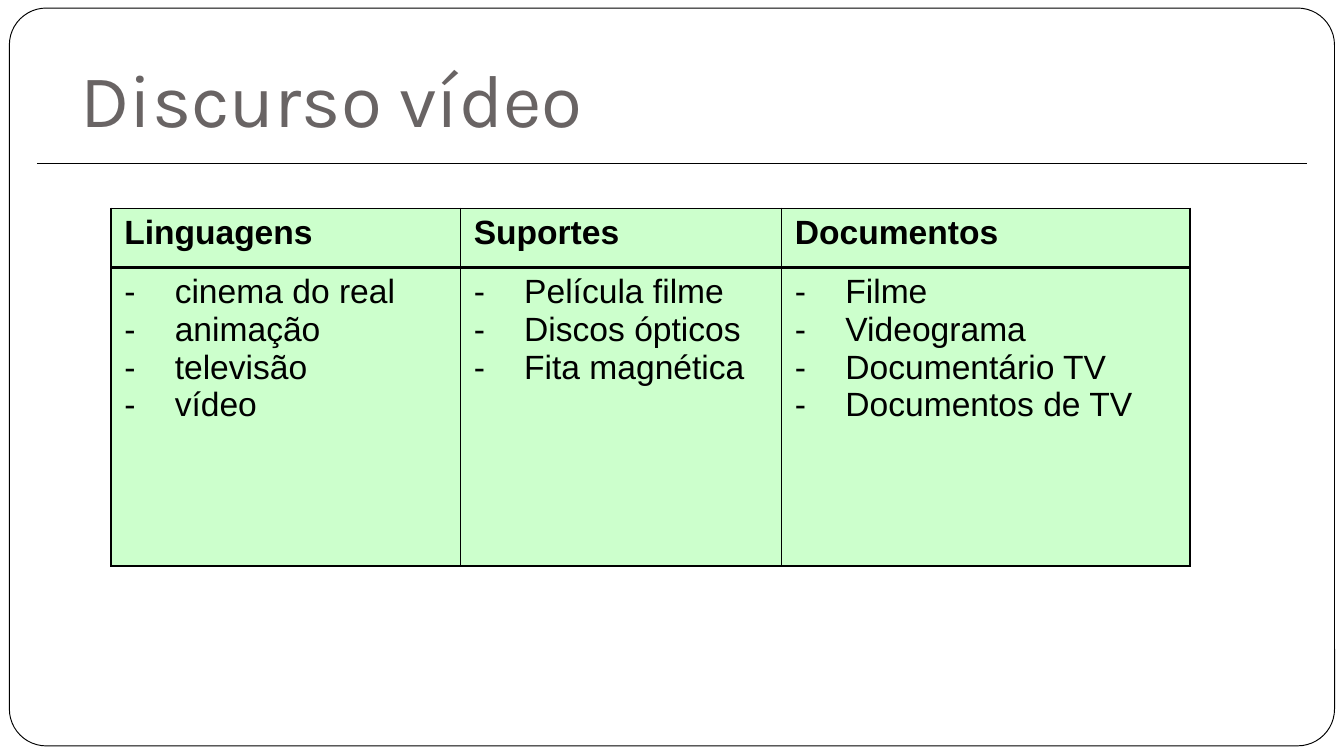
import pptx
import pptx.util
import pptx.dml.color
import pptx.enum.shapes
import pptx.enum.text
import pptx.oxml
import pptx.oxml.ns
from lxml import etree

PX = 4572  # 200 px to the inch
ALIGN = pptx.enum.text.PP_ALIGN
ANCHOR = pptx.enum.text.MSO_ANCHOR
KIND = pptx.enum.shapes.MSO_SHAPE
LINK = pptx.enum.shapes.MSO_CONNECTOR
qn = pptx.oxml.ns.qn


def color(code):
    return pptx.dml.color.RGBColor.from_string(code)


def style(font, form):
    for key, value in form.items():
        if key == "color":
            font.color.rgb = color(value)
        else:
            setattr(font, key, value)


deck = pptx.Presentation()
deck.slide_width, deck.slide_height = 2000 * PX, 1125 * PX
slide = deck.slides.add_slide(deck.slide_layouts[5])
shapes = slide.shapes

# Title
title = shapes.title
box = {"left": 100, "top": 20, "width": 1650, "height": 212}
for key, value in box.items():
    setattr(title, key, value * PX)
frame = title.text_frame
inset = {"margin_left": 20, "margin_top": 10, "margin_right": 20, "margin_bottom": 20}
for key, value in inset.items():
    setattr(frame, key, value * PX)
frame.auto_size = pptx.enum.text.MSO_AUTO_SIZE.NONE
frame.vertical_anchor = ANCHOR.BOTTOM
frame.text = "Discurso vídeo"
head = frame.paragraphs[0]
head.alignment = ALIGN.LEFT
style(head.runs[0].font, {"name": "Karla", "size": pptx.util.Pt(40), "color": "696464"})

# Rounded border, behind the title
card = shapes.add_shape(KIND.ROUNDED_RECTANGLE, 14 * PX, 12 * PX, 1972 * PX, 1098 * PX)
card.adjustments[0] = 0.05
card.shadow.inherit = False
card.fill.solid()
card.fill.fore_color.rgb = color("FFFFFF")
card.line.color.rgb = color("000000")
card.line.width = pptx.util.Pt(0.5)
title._element.addprevious(card._element)

# Table
data = [
    ("Linguagens", 520, ALIGN.LEFT, ALIGN.JUSTIFY,
     ["cinema do real", "animação", "televisão", "vídeo"]),
    ("Suportes", 478, ALIGN.JUSTIFY, ALIGN.JUSTIFY,
     ["Película filme", "Discos ópticos", "Fita magnética"]),
    ("Documentos", 608, ALIGN.LEFT, ALIGN.LEFT,
     ["Filme", "Videograma", "Documentário TV", "Documentos de TV"]),
]
table = shapes.add_table(2, 3, 165 * PX, 310 * PX, 1606 * PX, 532 * PX).table
table.first_row = table.horz_banding = False
for row, high in zip(table.rows, (88, 444)):
    row.height = high * PX

pad = {"margin_left": 20, "margin_top": 9, "margin_right": 20, "margin_bottom": 9}
for col, (name, wide, top, low, items) in enumerate(data):
    table.columns[col].width = wide * PX
    for row, (lines, align) in enumerate((([name], top), (items, low))):
        cell = table.cell(row, col)
        for key, value in pad.items():
            setattr(cell, key, value * PX)

        # Borders: the rule under the header is thicker
        props = cell._tc.get_or_add_tcPr()
        for side in "LRTB":
            thick = pptx.util.Pt(2.25 if side == "BT"[row] else 1)
            edge = etree.SubElement(props, qn("a:ln" + side), w=str(int(thick)))
            fill = etree.SubElement(edge, qn("a:solidFill"))
            etree.SubElement(fill, qn("a:srgbClr"), val="000000")
        cell.fill.solid()
        cell.fill.fore_color.rgb = color("CCFFCC")

        # Header or dashed list
        cell.text = "\n".join(lines)
        for para in cell.text_frame.paragraphs:
            para.alignment = align
            form = para._p.get_or_add_pPr()
            form.set("marL", str(75 * PX))
            form.set("indent", str(-75 * PX))
            if row:
                etree.SubElement(form, qn("a:buFont"), typeface="Arial")
                etree.SubElement(form, qn("a:buChar"), char="-")
            else:
                etree.SubElement(form, qn("a:buNone"))
            style(para.runs[0].font, {"name": "Arial", "size": pptx.util.Pt(18),
                                      "color": "000000", "bold": row == 0})

# Rule under the title
rule = shapes.add_connector(LINK.STRAIGHT, 55 * PX, 243 * PX, 1945 * PX, 243 * PX)
rule.line.color.rgb = color("000000")
rule.line.width = pptx.util.Pt(0.75)
etree.SubElement(rule._element.spPr, qn("a:effectLst"))

deck.save("out.pptx")
